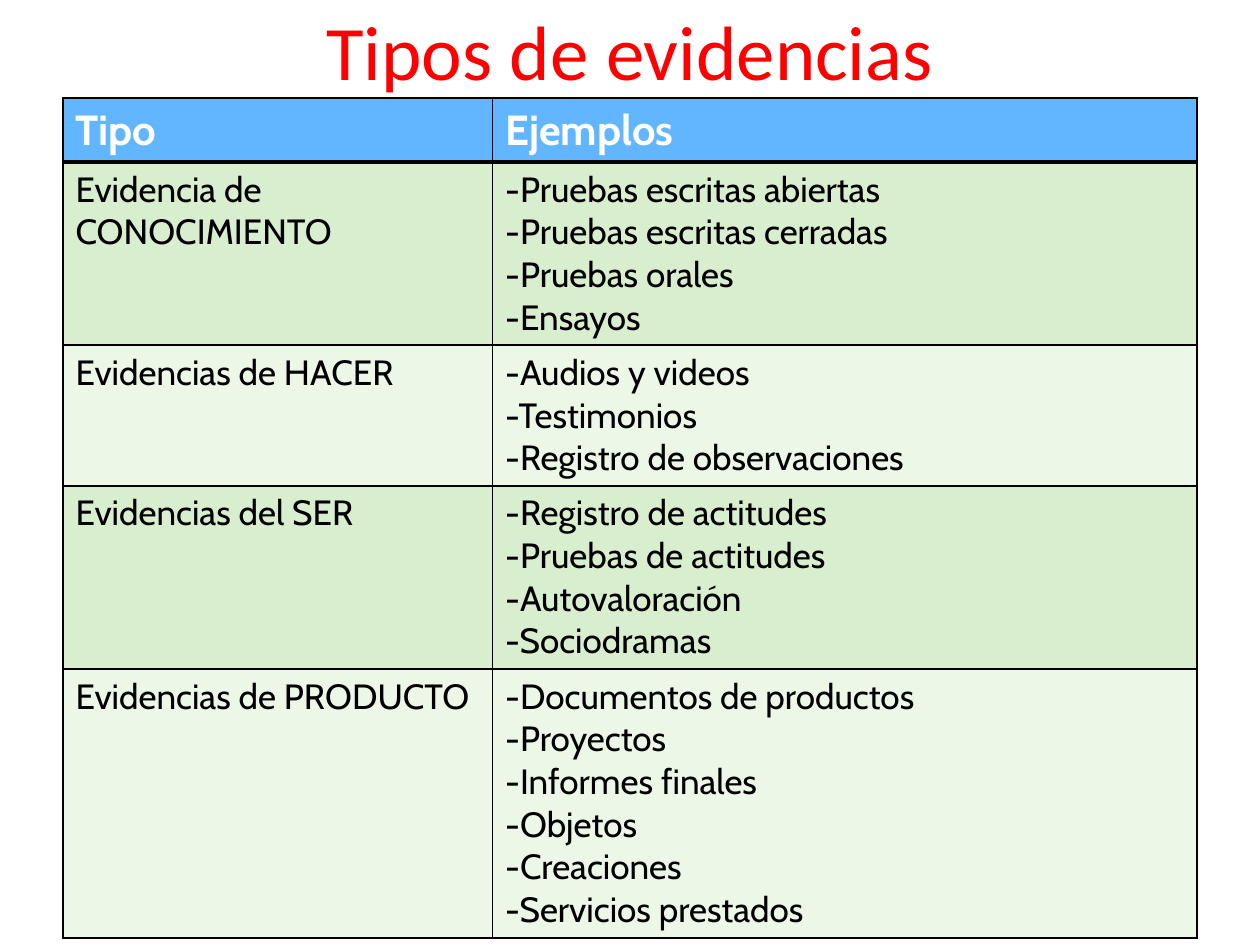
import dataclasses

import lxml.etree
import pptx
import pptx.dml.color
import pptx.enum.text
import pptx.oxml.ns
import pptx.util

Cm = pptx.util.Cm
Pt = pptx.util.Pt


@dataclasses.dataclass(frozen=True)
class Theme:
    title_font: str = "Calibri"
    table_font: str = "Cabin"
    title_size: int = 44
    header_size: int = 24
    body_size: int = 20
    title_color: str = "FF0000"
    header_color: str = "FFFFFF"
    body_color: str = "000000"
    header_fill: str = "61B6FF"
    band_fills: tuple = ("D8EECE", "ECF7E8")
    border_color: str = "000000"
    thin_border: int = 1
    thick_border: int = 3


HEADINGS = ("Tipo", "Ejemplos")
EVIDENCE = [
    ("Evidencia de CONOCIMIENTO",
     ["Pruebas escritas abiertas", "Pruebas escritas cerradas", "Pruebas orales", "Ensayos"]),
    ("Evidencias de HACER",
     ["Audios y videos", "Testimonios", "Registro de observaciones"]),
    ("Evidencias del SER",
     ["Registro de actitudes", "Pruebas de actitudes", "Autovaloración", "Sociodramas"]),
    ("Evidencias de PRODUCTO",
     ["Documentos de productos", "Proyectos", "Informes finales", "Objetos", "Creaciones",
      "Servicios prestados"]),
]
COLUMN_WIDTHS = (8.66, 14.2)
ROW_HEIGHTS = (1.27, 3.63, 2.79, 3.63, 5.33)


def rgb(color):
    return pptx.dml.color.RGBColor.from_string(color)


def write_text(frame, text, *, font, size, color, bold=False, align=None):
    """Fill the frame with one paragraph for each line of the text."""
    frame.word_wrap = True
    for index, line in enumerate(text.split("\n")):
        paragraph = frame.paragraphs[0] if index == 0 else frame.add_paragraph()
        paragraph.alignment = align
        run = paragraph.add_run()
        run.text = line
        run.font.name = font
        run.font.size = Pt(size)
        run.font.bold = bold
        run.font.color.rgb = rgb(color)


def draw_borders(cell, color, widths):
    """Set the left, right, top and bottom borders, with widths in points."""
    qn = pptx.oxml.ns.qn
    properties = cell._tc.get_or_add_tcPr()
    for position, (side, width) in enumerate(zip("LRTB", widths)):
        line = lxml.etree.Element(qn(f"a:ln{side}"), w=str(Pt(width)))
        fill = lxml.etree.SubElement(line, qn("a:solidFill"))
        lxml.etree.SubElement(fill, qn("a:srgbClr"), val=color)
        properties.insert(position, line)


class SlideBuilder:
    def __init__(self, slide, theme):
        self.slide = slide
        self.theme = theme

    def title(self, text, left, top, width, height):
        title = self.slide.shapes.title
        title.left, title.top = Cm(left), Cm(top)
        title.width, title.height = Cm(width), Cm(height)
        title.text_frame.vertical_anchor = pptx.enum.text.MSO_ANCHOR.MIDDLE
        write_text(title.text_frame, text, font=self.theme.title_font,
                   size=self.theme.title_size, color=self.theme.title_color,
                   align=pptx.enum.text.PP_ALIGN.CENTER)

    def cell(self, cell, text, row):
        theme = self.theme
        header = row == 0
        fill = theme.header_fill if header else theme.band_fills[(row - 1) % 2]
        cell.fill.solid()
        cell.fill.fore_color.rgb = rgb(fill)
        write_text(cell.text_frame, text, font=theme.table_font, bold=header,
                   size=theme.header_size if header else theme.body_size,
                   color=theme.header_color if header else theme.body_color)
        thin, thick = theme.thin_border, theme.thick_border
        draw_borders(cell, theme.border_color,
                     (thin, thin, thick if row == 1 else thin, thick if header else thin))

    def table(self, rows, left, top, column_widths, row_heights):
        table = self.slide.shapes.add_table(
            len(rows), len(column_widths), Cm(left), Cm(top),
            Cm(sum(column_widths)), Cm(sum(row_heights))).table
        for column, width in zip(table.columns, column_widths):
            column.width = Cm(width)
        for row, height in zip(table.rows, row_heights):
            row.height = Cm(height)
        for row_index, texts in enumerate(rows):
            for column_index, text in enumerate(texts):
                self.cell(table.cell(row_index, column_index), text, row_index)


def main():
    presentation = pptx.Presentation()
    presentation.slide_width, presentation.slide_height = Cm(25.4), Cm(19.05)
    title_only = presentation.slide_layouts[5]
    builder = SlideBuilder(presentation.slides.add_slide(title_only), Theme())

    builder.title("Tipos de evidencias", 1.27, -0.58, 22.86, 3.17)
    evidence_rows = [(kind, "\n".join(f"-{example}" for example in examples))
                     for kind, examples in EVIDENCE]
    builder.table([HEADINGS, *evidence_rows], 1.27, 1.98, COLUMN_WIDTHS, ROW_HEIGHTS)

    presentation.save("out.pptx")


if __name__ == "__main__":
    main()
